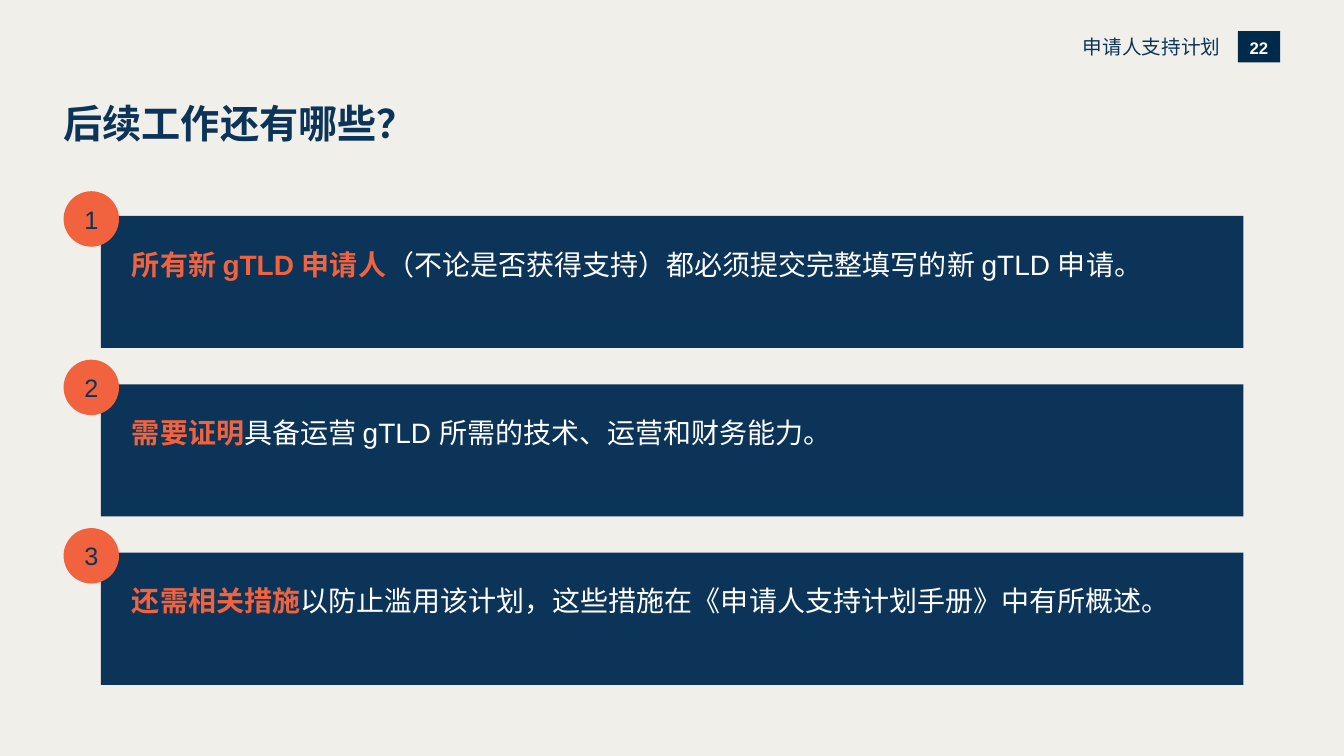
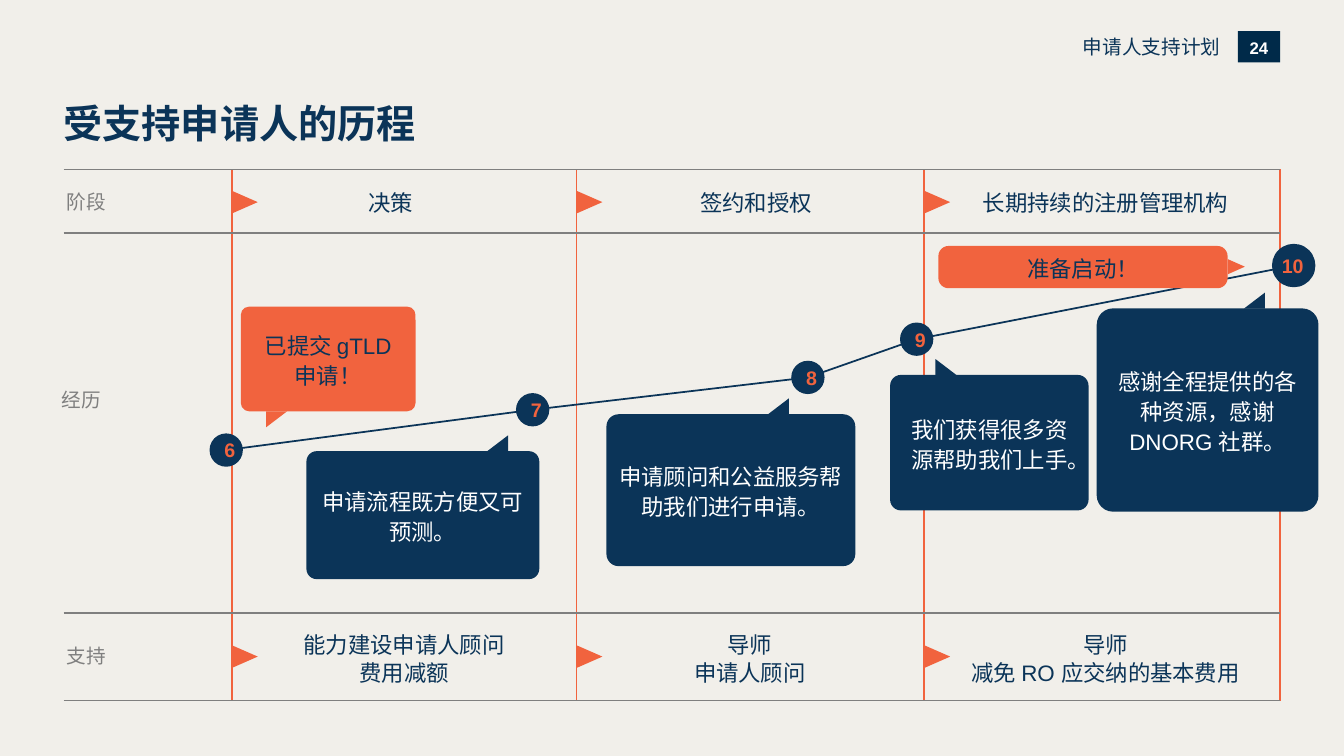
import pptx
import pptx.dml.color
import pptx.enum.lang
import pptx.enum.shapes
import pptx.enum.text
import pptx.oxml
import pptx.oxml.ns
import pptx.util
from dataclasses import dataclass

Pt = pptx.util.Pt
Shape = pptx.enum.shapes.MSO_SHAPE
Align = pptx.enum.text.PP_ALIGN
Anchor = pptx.enum.text.MSO_ANCHOR


@dataclass(frozen=True)
class Theme:
    paper: str = "F1EFEA"
    navy: str = "0B3458"
    badge: str = "002A49"
    orange: str = "F1633E"
    gray: str = "7F7F7F"
    white: str = "FFFFFF"
    font: str = "Arial"
    title: int = 28
    body: int = 20
    step: int = 18
    cell: int = 16
    label: int = 14
    page: int = 12
    line: float = 1.25


theme = Theme()
rgb = pptx.dml.color.RGBColor.from_string


def add_box(slide, box, runs=(), size=theme.label, kind=None, fill=None, align=Align.CENTER,
            anchor=Anchor.MIDDLE, insets=(0, 0, 0, 0), spacing=1.0, radius=None):
    """Add a shape, or a text box when kind is None; runs are (text, colour, bold)."""
    place = [Pt(length) for length in box]
    if kind is None:
        item = slide.shapes.add_textbox(*place)
    else:
        item = slide.shapes.add_shape(kind, *place)
        item.shadow.inherit = False
        item.fill.solid()
        item.fill.fore_color.rgb = rgb(fill)
        item.line.fill.background()
    if radius is not None:
        item.adjustments[0] = radius
    frame = item.text_frame
    left, top, right, bottom = (Pt(inset) for inset in insets)
    frame_format = {"word_wrap": True, "vertical_anchor": anchor, "margin_left": left,
                    "margin_top": top, "margin_right": right, "margin_bottom": bottom}
    for name, value in frame_format.items():
        setattr(frame, name, value)
    paragraph = frame.paragraphs[0]
    paragraph.alignment, paragraph.line_spacing = align, spacing
    for text, color, bold in runs:
        for row, words in enumerate(text.split("\n")):
            if row:
                paragraph.add_line_break()
            run = paragraph.add_run()
            run.text = words
            font_format = {"name": theme.font, "size": Pt(size), "bold": bold,
                           "language_id": pptx.enum.lang.MSO_LANGUAGE_ID.SIMPLIFIED_CHINESE}
            for name, value in font_format.items():
                setattr(run.font, name, value)
            run.font.color.rgb = rgb(color)
    return item


def add_line(slide, start, end, color):
    line = slide.shapes.add_connector(pptx.enum.shapes.MSO_CONNECTOR.STRAIGHT,
                                      *(Pt(length) for length in (*start, *end)))
    line.line.color.rgb = rgb(color)
    line.line.width = Pt(theme.line)
    line._element.spPr.append(pptx.oxml.parse_xml(
        f"<a:effectLst {pptx.oxml.ns.nsdecls('a')}/>"))


prs = pptx.Presentation()
prs.slide_width, prs.slide_height = Pt(960), Pt(540)
prs.slide_master.background.fill.solid()
prs.slide_master.background.fill.fore_color.rgb = rgb(theme.paper)

# Page badge, running header and title
pages = []
for number, title in (("22", "后续工作还有哪些？"), ("24", "受支持申请人的历程")):
    page = prs.slides.add_slide(prs.slide_layouts[6])
    add_box(page, (884.2, 22.3, 30.2, 22.3), [(number, theme.white, True)], theme.page,
            Shape.RECTANGLE, theme.badge, spacing=1.08)
    add_box(page, (524.2, 25.2, 347.6, 17.3), [("申请人支持计划", theme.navy, False)],
            align=Align.RIGHT, anchor=Anchor.TOP)
    add_box(page, (45.4, 70.6, 612, 41.8), [(title, theme.navy, True)], theme.title,
            align=Align.LEFT, anchor=Anchor.TOP)
    pages.append(page)
next_steps, journey = pages

# Numbered steps
steps = [
    ("所有新 gTLD 申请人", "（不论是否获得支持）都必须提交完整填写的新 gTLD 申请。"),
    ("需要证明", "具备运营 gTLD 所需的技术、运营和财务能力。"),
    ("还需相关措施", "以防止滥用该计划，这些措施在《申请人支持计划手册》中有所概述。"),
]
for index, (lead, rest) in enumerate(steps):
    top = 154.2 + index * 120.3
    add_box(next_steps, (72, top, 816.2, 94.4),
            [(lead, theme.orange, True), (rest, theme.white, False)], theme.body,
            Shape.RECTANGLE, theme.navy, Align.LEFT, Anchor.TOP, (22.3, 22.3, 25.2, 22.3))
    add_box(next_steps, (45.4, top - 17.6, 39.6, 39.6),
            [(str(index + 1), theme.navy, False)], theme.step, Shape.OVAL, theme.orange)

# Journey grid
column_lines = [165.6, 411.8, 660.2, 914.4]
row_lines = [121, 166.3, 437.8, 500.4]
for x in column_lines:
    add_line(journey, (x, row_lines[0]), (x, row_lines[-1]), theme.orange)
for y in row_lines:
    add_line(journey, (45.4, y), (column_lines[-1], y), theme.gray)
for label, left, top in (("阶段", 47.5, 135.4), ("经历", 43.9, 277.2), ("支持", 47.5, 460.1)):
    add_box(journey, (left, top, 104, 17.3), [(label, theme.gray, False)],
            align=Align.LEFT, anchor=Anchor.TOP)

# Phases and the support given in each
phases = [
    ("决策", 163.4, "能力建设申请人顾问\n费用减额", 164.8),
    ("签约和授权", 424.1, "导师\n申请人顾问", 411.8),
    ("长期持续的注册管理机构", 673.9, "导师\n减免 RO 应交纳的基本费用", 666),
]
arrows = [(x + 9.5, y, 15.8, 18) for x in column_lines[:-1] for y in (144.4, 469)]
for phase, phase_left, support, support_left in phases:
    add_box(journey, (phase_left, 127.4, 231.8, 33.1), [(phase, theme.navy, False)],
            theme.cell, spacing=1.06)
    add_box(journey, (support_left, 442.1, 247.7, 55.4), [(support, theme.navy, False)],
            theme.cell, spacing=1.06)

# Milestone path, centre and diameter of each stop
stops = [("6", 161.6, 321.5, 23.8), ("7", 380.5, 292.7, 23.8), ("8", 577.1, 269.6, 23.8),
         ("9", 654.8, 242.3, 23.8), ("10", 924.1, 189.7, 31)]
for here, there in zip(stops, stops[1:]):
    add_line(journey, here[1:3], there[1:3], theme.navy)
for number, x, y, size in stops:
    insets = (5.2, 0, 0, 0) if len(number) == 1 else (0, 0, 1.4, 0)
    add_box(journey, (x - size / 2, y - size / 2, size, size), [(number, theme.orange, True)],
            kind=Shape.OVAL, fill=theme.navy, insets=insets)

# Speech bubbles: text, box, fill, text colour, tail left, tail flips
bubbles = [
    ("已提交 gTLD 申请！", (172, 219, 124.8, 74.8), theme.orange, theme.navy, 190, ["flipV"]),
    ("申请流程既方便又可预测。", (218.9, 322.3, 166.3, 91.4), theme.navy, theme.white,
     347.8, ["flipH"]),
    ("申请顾问和公益服务帮助我们进行申请。", (433.2, 295.9, 177.8, 108.5), theme.navy,
     theme.white, 548.4, ["flipH"]),
    ("我们获得很多资源帮助我们上手。", (635.8, 267.8, 141.8, 96.8), theme.navy,
     theme.white, 668.2, []),
    ("感谢全程提供的各种资源，感谢 DNORG 社群。", (783.4, 220.3, 158.4, 145.2), theme.navy,
     theme.white, 888.5, ["flipH"]),
    ("准备启动！", (670.3, 175.7, 206.6, 30.2), theme.orange, theme.navy, None, []),
]
for words, box, fill, color, tail_left, flips in bubbles:
    add_box(journey, box, [(words, color, False)], theme.cell, Shape.ROUNDED_RECTANGLE, fill,
            insets=(5.8, 2.9, 5.8, 2.9), spacing=1.12,
            radius=0.08 if tail_left else 0.24)
    if tail_left:
        tail_top = box[1] + box[3] if "flipV" in flips else box[1] - 11.3
        tail = add_box(journey, (tail_left, tail_top, 15.1, 11.5),
                       kind=Shape.RIGHT_TRIANGLE, fill=fill)
        for flip in flips:
            tail._element.spPr.xfrm.set(flip, "1")

# Arrowheads pointing right, placed by centre
for x, y, width, height in arrows + [(883.1, 190.5, 10.8, 12.2)]:
    arrow = add_box(journey, (x - width / 2, y - height / 2, width, height),
                    kind=Shape.ISOSCELES_TRIANGLE, fill=theme.orange)
    arrow.rotation = 90

prs.save("out.pptx")
